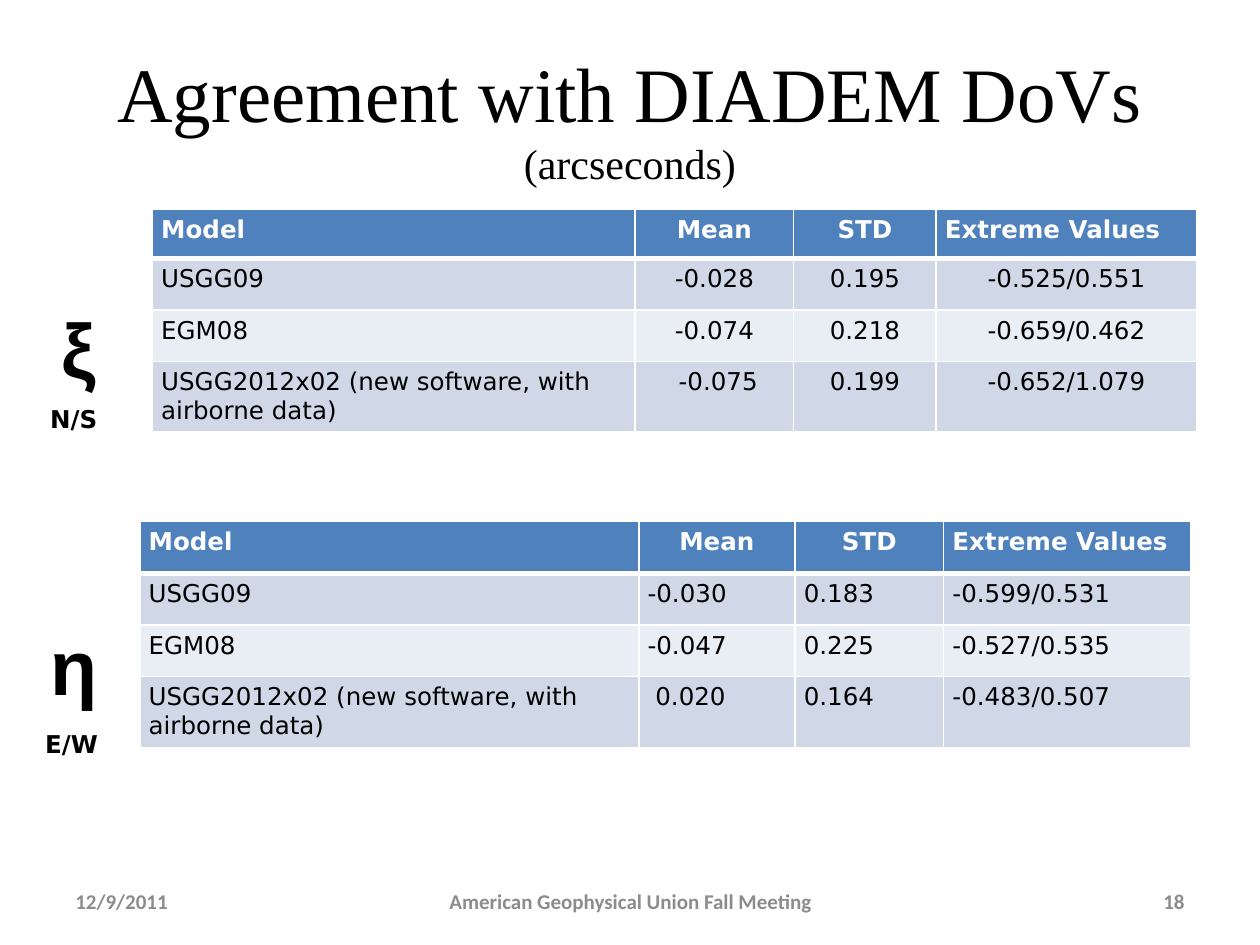
from dataclasses import dataclass

from lxml import etree
from pptx import Presentation
from pptx.dml.color import RGBColor
from pptx.enum.text import MSO_ANCHOR, MSO_AUTO_SIZE, PP_ALIGN
from pptx.oxml.ns import qn
from pptx.util import Inches, Pt

LEFT, CENTER, RIGHT = PP_ALIGN.LEFT, PP_ALIGN.CENTER, PP_ALIGN.RIGHT
TOP, MIDDLE = MSO_ANCHOR.TOP, MSO_ANCHOR.MIDDLE
NO_FIT = MSO_AUTO_SIZE.NONE
TITLE_ONLY = 5


@dataclass(frozen=True)
class Theme:
    black: str = "000000"
    white: str = "FFFFFF"
    header: str = "4F81BD"
    bands: tuple = ("D0D8E8", "E9EDF4")
    footer: str = "8C8C8C"
    title_font: str = "Times New Roman"
    table_font: str = "DejaVu Sans"
    symbol_font: str = "Arial"
    footer_font: str = "Calibri"
    large: int = 44
    subtitle: int = 24
    body: int = 14
    small: int = 12


THEME = Theme()
HEADINGS = ("Model", "Mean", "STD", "Extreme Values")
NEW_MODEL = "USGG2012x02 (new software, with airborne data)"
NORTH_SOUTH = (
    ("USGG09", "-0.028", "0.195", "-0.525/0.551"),
    ("EGM08", "-0.074", "0.218", "-0.659/0.462"),
    (NEW_MODEL, " -0.075", "0.199", "-0.652/1.079"),
)
EAST_WEST = (
    ("USGG09", "-0.030", "0.183", "-0.599/0.531"),
    ("EGM08", "-0.047", "0.225", "-0.527/0.535"),
    (NEW_MODEL, " 0.020", "0.164", "-0.483/0.507"),
)


def style_run(run, font, size, color, bold=False):
    run.font.name = font
    run.font.size = Pt(size)
    run.font.color.rgb = RGBColor.from_string(color)
    run.font.bold = bold


def add_label(slide, box, text, font, size, color, align=LEFT, anchor=TOP, wrap=False):
    shape = slide.shapes.add_textbox(*map(Inches, box))
    frame = shape.text_frame
    frame.text = text
    frame.word_wrap = wrap
    frame.vertical_anchor = anchor
    paragraph = frame.paragraphs[0]
    paragraph.alignment = align
    style_run(paragraph.runs[0], font, size, color, bold=True)


def add_title(slide, box):
    title = slide.shapes.title
    title.left, title.top, title.width, title.height = map(Inches, box)
    frame = title.text_frame
    frame.text = "Agreement with DIADEM DoVs\v(arcseconds)"
    frame.auto_size = NO_FIT
    frame.vertical_anchor = MIDDLE
    paragraph = frame.paragraphs[0]
    paragraph.alignment = CENTER
    for run, size in zip(paragraph.runs, (THEME.large, THEME.subtitle)):
        style_run(run, THEME.title_font, size, THEME.black)


def set_borders(cell, widths):
    properties = cell._tc.get_or_add_tcPr()
    for index, (side, width) in enumerate(widths.items()):
        line = etree.Element(qn(f"a:{side}"), w=str(Pt(width)))
        fill = etree.SubElement(line, qn("a:solidFill"))
        etree.SubElement(fill, qn("a:srgbClr"), val=THEME.white)
        properties.insert(index, line)


def format_cell(cell, text, row, align):
    is_header = row == 0
    cell.margin_left = cell.margin_right = Inches(0.07)
    cell.margin_top = cell.margin_bottom = Inches(0.05)
    cell.fill.solid()
    fill = THEME.header if is_header else THEME.bands[(row - 1) % 2]
    cell.fill.fore_color.rgb = RGBColor.from_string(fill)
    cell.text_frame.text = text
    paragraph = cell.text_frame.paragraphs[0]
    paragraph.alignment = align
    color = THEME.white if is_header else THEME.black
    style_run(paragraph.runs[0], THEME.table_font, THEME.body, color, is_header)
    set_borders(cell, {
        "lnL": 1,
        "lnR": 1,
        "lnT": 3 if row == 1 else 1,
        "lnB": 3 if is_header else 1,
    })


def add_agreement_table(slide, left, top, widths, heights, records, value_align):
    rows = (HEADINGS, *records)
    frame = slide.shapes.add_table(
        len(rows), len(HEADINGS), Inches(left), Inches(top),
        Inches(sum(widths)), Inches(sum(heights)),
    )
    table = frame.table
    for column, width in zip(table.columns, widths):
        column.width = Inches(width)
    for row, height in zip(table.rows, heights):
        row.height = Inches(height)
    header_align = (LEFT, CENTER, CENTER, LEFT)
    record_align = (LEFT, value_align, value_align, value_align)
    for row, texts in enumerate(rows):
        alignments = record_align if row else header_align
        for column, (text, align) in enumerate(zip(texts, alignments)):
            format_cell(table.cell(row, column), text, row, align)


def add_component(slide, symbol, symbol_box, direction, direction_box):
    add_label(slide, symbol_box, symbol, THEME.symbol_font, THEME.large, THEME.black)
    add_label(slide, direction_box, direction, THEME.table_font, THEME.body, THEME.black)


def add_footer(slide, left, top, width, height):
    side = 2.33
    parts = (
        ("12/9/2011", left, side, LEFT),
        ("American Geophysical Union Fall Meeting", left + 2.92, 3.17, CENTER),
        ("18", left + width - side, side, RIGHT),
    )
    for text, part_left, part_width, align in parts:
        add_label(
            slide, (part_left, top, part_width, height), text,
            THEME.footer_font, THEME.small, THEME.footer, align, MIDDLE, wrap=True,
        )


def main():
    presentation = Presentation()
    presentation.slide_width = Inches(10)
    presentation.slide_height = Inches(7.5)
    slide = presentation.slides.add_slide(presentation.slide_layouts[TITLE_ONLY])
    add_title(slide, (0.5, 0.3, 9, 1.25))
    add_agreement_table(
        slide, 1.21, 1.66, (3.83, 1.26, 1.13, 2.07), (0.39, 0.41, 0.41, 0.56),
        NORTH_SOUTH, CENTER,
    )
    add_component(slide, "ξ", (0.39, 2.34, 0.51, 0.84), "N/S", (0.3, 3.16, 0.64, 0.34))
    add_agreement_table(
        slide, 1.11, 4.14, (3.96, 1.24, 1.18, 1.96), (0.41, 0.41, 0.41, 0.56),
        EAST_WEST, LEFT,
    )
    add_component(slide, "η", (0.3, 4.86, 0.57, 0.84), "E/W", (0.26, 5.74, 0.69, 0.34))
    add_footer(slide, 0.5, 6.95, 9, 0.4)
    presentation.save("out.pptx")


if __name__ == "__main__":
    main()
